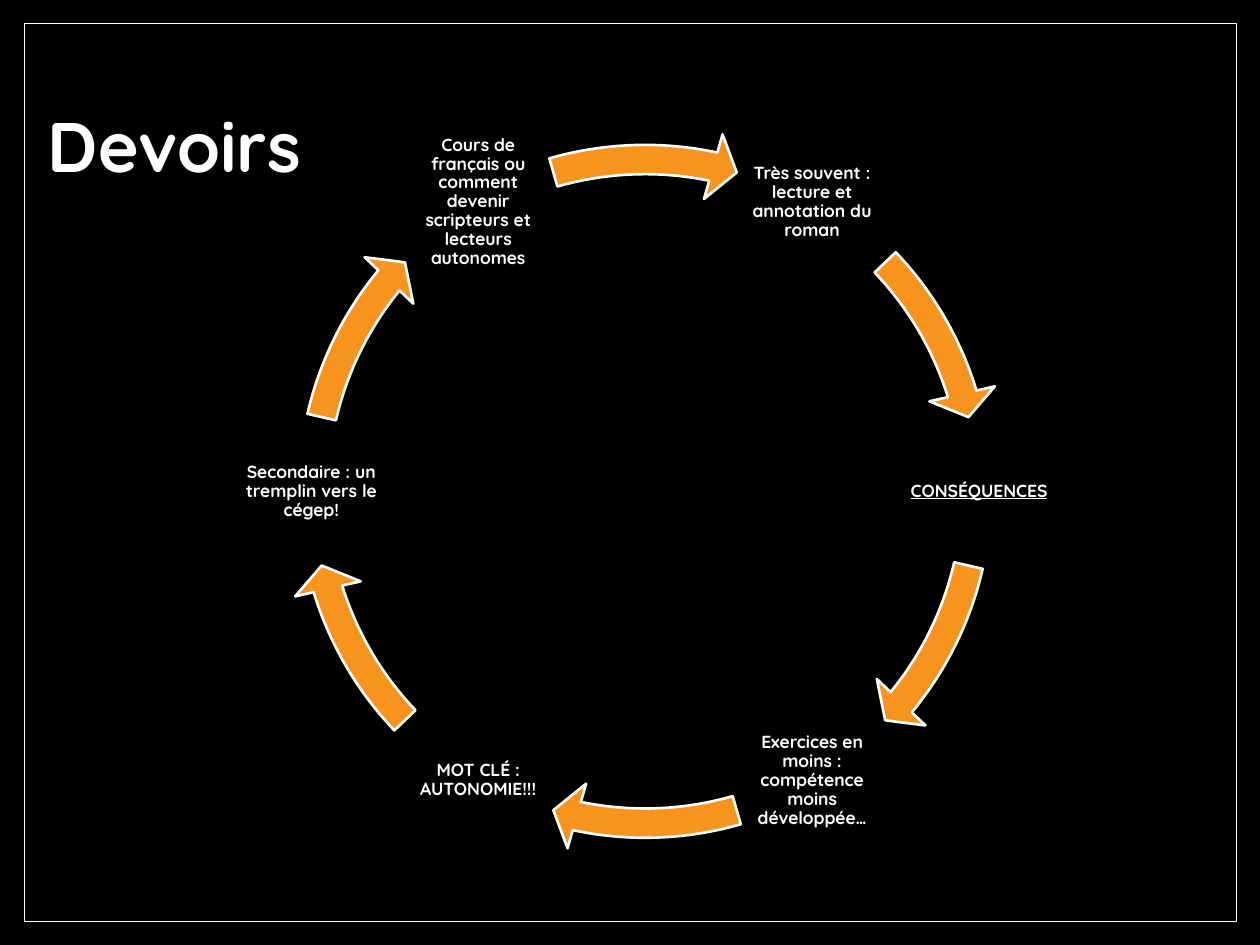
import math
from dataclasses import dataclass

import pptx
import pptx.dml.color
import pptx.enum.shapes
import pptx.enum.text
import pptx.util

SLIDE_WIDTH, SLIDE_HEIGHT = 10, 7.5
RING_CENTER = (0.512, 0.52)
RING_SIZE = 5.8
LABEL_ORBIT = 2.65
LABEL_SIZE = 1.19
LABEL_INSET = 0.03
ARROW_SPANS = [(316.36, 342.91), (12.93, 39.47), (73.96, 101.87)]
ARROW_THICKNESS, HEAD_ANGLE, HEAD_WIDTH = 0.04, 4.17, 0.046
ADJUSTMENT_PER_DEGREE = 0.6

STEPS = [
    "Très souvent : lecture et annotation du roman",
    "CONSÉQUENCES",
    "Exercices en moins : compétence moins développée…",
    "MOT CLÉ : AUTONOMIE!!!",
    "Secondaire : un tremplin vers le cégep!",
    "Cours de français ou comment devenir scripteurs et lecteurs autonomes",
]
UNDERLINED_STEP = "CONSÉQUENCES"


@dataclass(frozen=True)
class Theme:
    background: str = "000000"
    foreground: str = "FFFFFF"
    arrow: str = "F8931D"
    font: str = "Quicksand"
    title_size: float = 40
    label_size: float = 10
    frame_line: float = 0.5
    arrow_line: float = 1.5
    line_spacing: float = 0.9
    space_after: float = 3.5


THEME = Theme()


def color(value):
    return pptx.dml.color.RGBColor.from_string(value)


def box(left, top, width, height):
    return [pptx.util.Inches(length) for length in (left, top, width, height)]


def shares(left, top, width, height):
    return box(left * SLIDE_WIDTH, top * SLIDE_HEIGHT,
               width * SLIDE_WIDTH, height * SLIDE_HEIGHT)


def ring_point(angle, radius):
    x, y = RING_CENTER
    return (x * SLIDE_WIDTH + radius * math.cos(math.radians(angle)),
            y * SLIDE_HEIGHT + radius * math.sin(math.radians(angle)))


def centered_box(center, size):
    x, y = center
    return box(x - size / 2, y - size / 2, size, size)


def add_text(slide, bounds, wording, size):
    frame = slide.shapes.add_textbox(*bounds).text_frame
    frame.word_wrap = True
    frame.vertical_anchor = pptx.enum.text.MSO_ANCHOR.MIDDLE
    frame.text = wording
    paragraph = frame.paragraphs[0]
    paragraph.line_spacing = THEME.line_spacing
    font = paragraph.runs[0].font
    font.name = THEME.font
    font.size = pptx.util.Pt(size)
    font.bold = True
    font.color.rgb = color(THEME.foreground)
    return frame


def add_label(slide, angle, wording):
    bounds = centered_box(ring_point(angle, LABEL_ORBIT), LABEL_SIZE)
    frame = add_text(slide, bounds, wording, THEME.label_size)
    inset = pptx.util.Inches(LABEL_INSET)
    frame.margin_left = frame.margin_right = inset
    frame.margin_top = frame.margin_bottom = inset
    paragraph = frame.paragraphs[0]
    paragraph.alignment = pptx.enum.text.PP_ALIGN.CENTER
    paragraph.space_after = pptx.util.Pt(THEME.space_after)
    if wording == UNDERLINED_STEP:
        paragraph.runs[0].font.underline = True


def add_outlined(slide, kind, bounds, line_width):
    outlined = slide.shapes.add_shape(kind, *bounds)
    outlined.shadow.inherit = False
    outlined.line.color.rgb = color(THEME.foreground)
    outlined.line.width = pptx.util.Pt(line_width)
    return outlined


def add_frame(slide):
    frame = add_outlined(slide, pptx.enum.shapes.MSO_SHAPE.RECTANGLE,
                         shares(0.019, 0.025, 0.962, 0.95), THEME.frame_line)
    frame.fill.background()


def add_arrow(slide, start, end):
    arrow = add_outlined(slide, pptx.enum.shapes.MSO_SHAPE.CIRCULAR_ARROW,
                         centered_box(ring_point(0, 0), RING_SIZE), THEME.arrow_line)
    arrow.fill.solid()
    arrow.fill.fore_color.rgb = color(THEME.arrow)
    settings = (ARROW_THICKNESS, HEAD_ANGLE * ADJUSTMENT_PER_DEGREE,
                end * ADJUSTMENT_PER_DEGREE, start * ADJUSTMENT_PER_DEGREE, HEAD_WIDTH)
    for index, setting in enumerate(settings):
        arrow.adjustments[index] = setting


def add_cycle(slide):
    step_angle = 360 / len(STEPS)
    for index, wording in enumerate(STEPS):
        add_label(slide, (index - 1) * step_angle, wording)
        half_turns, span = divmod(index, len(ARROW_SPANS))
        start, end = [(angle + 180 * half_turns) % 360 for angle in ARROW_SPANS[span]]
        add_arrow(slide, start, end)


def main():
    deck = pptx.Presentation()
    deck.slide_width = pptx.util.Inches(SLIDE_WIDTH)
    deck.slide_height = pptx.util.Inches(SLIDE_HEIGHT)
    slide = deck.slides.add_slide(deck.slide_layouts[6])
    slide.background.fill.solid()
    slide.background.fill.fore_color.rgb = color(THEME.background)
    add_frame(slide)
    add_text(slide, shares(0.028, 0.059, 0.825, 0.2), "Devoirs", THEME.title_size)
    add_cycle(slide)
    deck.save("out.pptx")


if __name__ == "__main__":
    main()
